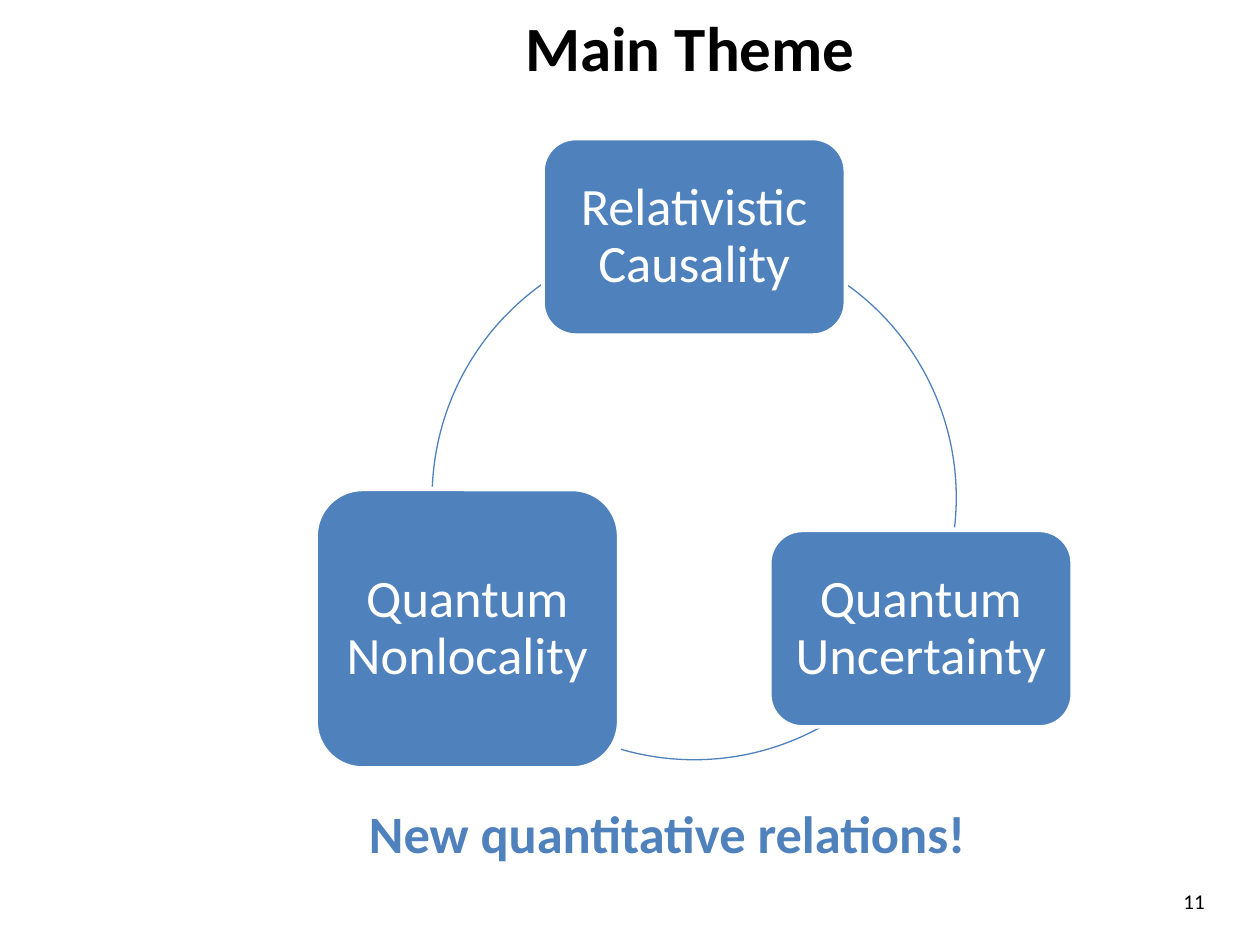
from dataclasses import dataclass

import pptx
import pptx.dml.color
import pptx.enum.shapes
import pptx.enum.text
import pptx.util
from pptx.util import Inches

BLUE = pptx.dml.color.RGBColor(0x4F, 0x81, 0xBD)
WHITE = pptx.dml.color.RGBColor(0xFF, 0xFF, 0xFF)
BLACK = pptx.dml.color.RGBColor(0x00, 0x00, 0x00)
SHAPES = pptx.enum.shapes.MSO_SHAPE
ALIGN = pptx.enum.text.PP_ALIGN
ANCHOR = pptx.enum.text.MSO_ANCHOR

CENTRE_X, CENTRE_Y, RADIUS = 5.51, 3.95, 2.08
NODE_WIDTH = 2.4


@dataclass
class Node:
    text: str
    centre_x: float
    centre_y: float
    height: float


@dataclass
class Arc:
    """Part of the ring, in degrees clockwise from three o'clock."""
    start: float
    end: float


NODES = [
    Node("Relativistic Causality", 5.51, 1.88, 1.56),
    Node("Quantum Uncertainty", 7.31, 4.99, 1.56),
    Node("Quantum Nonlocality", 3.71, 4.99, 2.21),
]
ARCS = [Arc(306, 6.5), Arc(61.4, 106.2), Arc(182.4, 234.4)]


def write_text(box, text: str, *, size: float, color, bold: bool = False,
               align=ALIGN.LEFT, anchor=ANCHOR.TOP, spacing: float = 1.0,
               inset: float = 0.1) -> None:
    frame = box.text_frame
    frame.word_wrap = True
    frame.auto_size = pptx.enum.text.MSO_AUTO_SIZE.NONE
    frame.vertical_anchor = anchor
    frame.margin_left = frame.margin_right = Inches(inset)
    frame.margin_top = frame.margin_bottom = Inches(0.05)
    para = frame.paragraphs[0]
    para.alignment = align
    para.line_spacing = spacing
    span = para.add_run()
    span.text = text
    span.font.name = "Calibri"
    span.font.size = pptx.util.Pt(size)
    span.font.bold = bold
    span.font.color.rgb = color


def draw_arc(page, arc: Arc) -> None:
    shape = page.shapes.add_shape(
        SHAPES.ARC, Inches(CENTRE_X - RADIUS), Inches(CENTRE_Y - RADIUS),
        Inches(2 * RADIUS), Inches(2 * RADIUS))
    # Angles are stored in 1/60000 degree; adjustments are scaled by 100000.
    shape.adjustments[0] = arc.start * 0.6
    shape.adjustments[1] = arc.end * 0.6
    shape.shadow.inherit = False
    shape.fill.background()
    shape.line.color.rgb = BLUE
    shape.line.width = pptx.util.Pt(0.75)


def draw_node(page, node: Node) -> None:
    shape = page.shapes.add_shape(
        SHAPES.ROUNDED_RECTANGLE, Inches(node.centre_x - NODE_WIDTH / 2),
        Inches(node.centre_y - node.height / 2),
        Inches(NODE_WIDTH), Inches(node.height))
    shape.shadow.inherit = False
    shape.fill.solid()
    shape.fill.fore_color.rgb = BLUE
    shape.line.color.rgb = WHITE
    shape.line.width = pptx.util.Pt(2)
    write_text(shape, node.text, size=30, color=WHITE, align=ALIGN.CENTER,
               anchor=ANCHOR.MIDDLE, spacing=0.9, inset=0.05)


def main() -> None:
    deck = pptx.Presentation()
    deck.slide_width, deck.slide_height = Inches(10), Inches(7.5)
    page = deck.slides.add_slide(deck.slide_layouts[5])

    title = page.shapes.title
    title.left, title.top = Inches(4.07), Inches(0.02)
    title.width, title.height = Inches(2.88), Inches(1.08)
    write_text(title, "Main Theme", size=36, color=BLACK, bold=True)

    for arc in ARCS:
        draw_arc(page, arc)
    for node in NODES:
        draw_node(page, node)

    conclusion = page.shapes.add_textbox(
        Inches(2.83), Inches(6.31), Inches(5.35), Inches(1.08))
    write_text(conclusion, "New quantitative relations!", size=30, color=BLUE,
               bold=True)

    number = page.shapes.add_textbox(
        Inches(7.33), Inches(6.95), Inches(2.33), Inches(0.4))
    write_text(number, "11", size=12, color=BLACK, align=ALIGN.RIGHT,
               anchor=ANCHOR.MIDDLE)

    deck.save("out.pptx")


if __name__ == "__main__":
    main()
